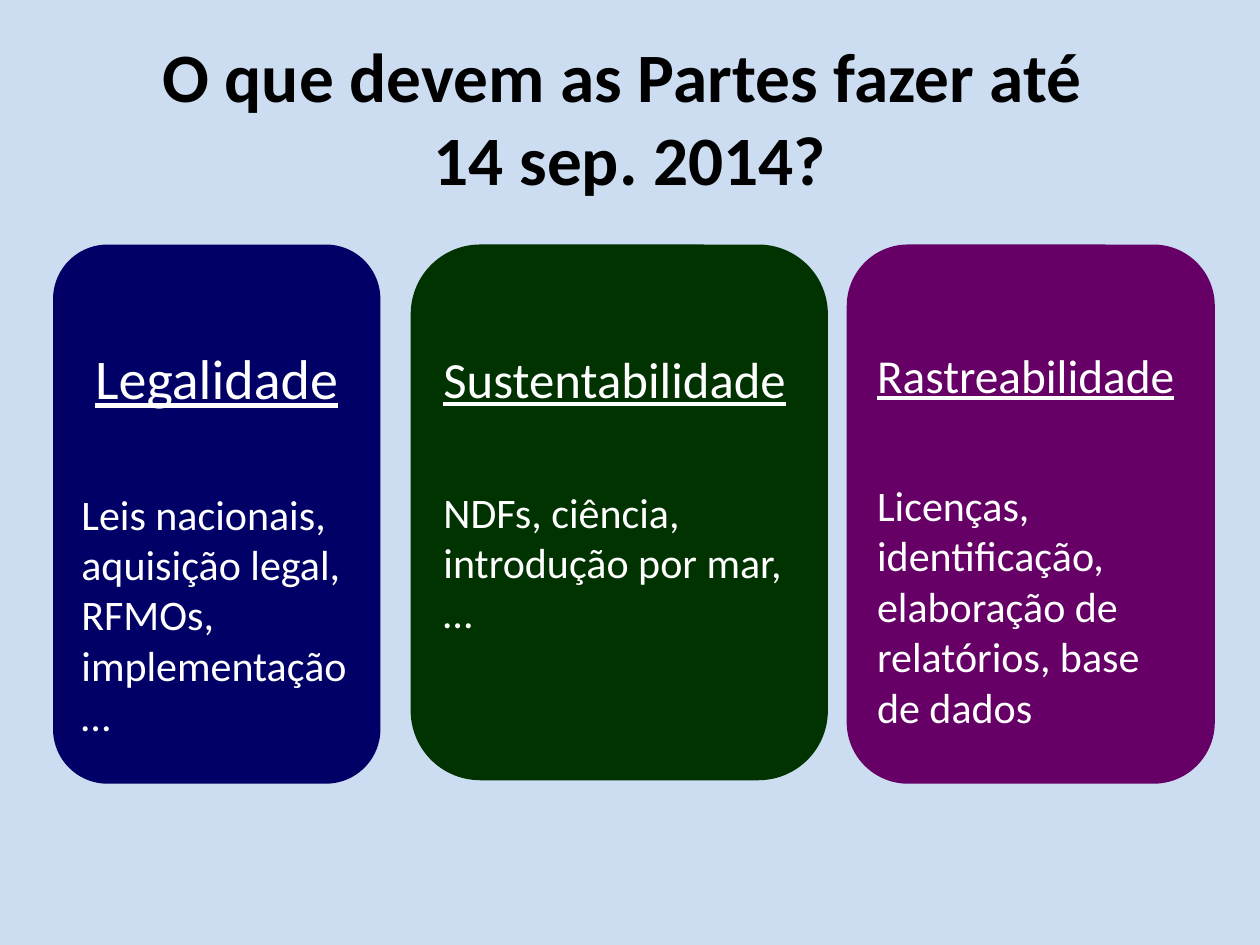
"""Build a slide with a title and three coloured cards."""
from pptx import Presentation
from pptx.dml.color import RGBColor
from pptx.enum.shapes import MSO_SHAPE
from pptx.enum.text import MSO_ANCHOR, PP_ALIGN
from pptx.util import Cm, Pt

ROUNDED = MSO_SHAPE.ROUNDED_RECTANGLE
TOP, MIDDLE = MSO_ANCHOR.TOP, MSO_ANCHOR.MIDDLE
LEFT, CENTER = PP_ALIGN.LEFT, PP_ALIGN.CENTER

FONT = "Calibri"
BACKGROUND, BLACK, WHITE = "CCDDF2", "000000", "FFFFFF"
TITLE = "O que devem as Partes fazer até \v14 sep. 2014?"
CARD_TOP = 4.93
CARDS = [
    {"heading": "Legalidade", "size": 32, "align": CENTER, "color": "000066",
     "body": "Leis nacionais, aquisição legal, RFMOs, implementação …",
     "left": 1.07, "width": 6.6, "height": 10.87},
    {"heading": "Sustentabilidade", "size": 29, "align": LEFT, "color": "003300",
     "body": "NDFs, ciência, introdução por mar, …",
     "left": 8.28, "width": 8.41, "height": 10.8},
    {"heading": "Rastreabilidade", "size": 27, "align": LEFT, "color": "660066",
     "body": "Licenças, identificação, elaboração de relatórios, base de dados",
     "left": 17.07, "width": 7.42, "height": 10.87},
]


def paint(fill, color):
    fill.solid()
    fill.fore_color.rgb = RGBColor.from_string(color)


def write(paragraph, text, size, color, align):
    paragraph.text = text
    paragraph.alignment = align
    paragraph.font.name = FONT
    paragraph.font.size = Pt(size)
    paragraph.font.color.rgb = RGBColor.from_string(color)
    return paragraph


def add_title(page):
    box = page.shapes.add_textbox(Cm(1.27), Cm(0.76), Cm(22.86), Cm(3.18))
    frame = box.text_frame
    frame.word_wrap = True
    frame.vertical_anchor = MIDDLE
    write(frame.paragraphs[0], TITLE, 39.6, BLACK, CENTER).font.bold = True


def add_card(page, card):
    box = page.shapes.add_shape(ROUNDED, Cm(card["left"]), Cm(CARD_TOP),
                                Cm(card["width"]), Cm(card["height"]))
    box.shadow.inherit = False
    paint(box.fill, card["color"])
    box.line.fill.background()
    frame = box.text_frame
    frame.word_wrap = True
    frame.vertical_anchor = TOP
    frame.margin_top = Cm(1.68)
    heading = write(frame.paragraphs[0], card["heading"], card["size"], WHITE, card["align"])
    heading.font.underline = True
    body = write(frame.add_paragraph(), card["body"], 24, WHITE, LEFT)
    body.space_before = Pt(44)


def main():
    deck = Presentation()
    deck.slide_width, deck.slide_height = Cm(25.4), Cm(19.05)
    page = deck.slides.add_slide(deck.slide_layouts[6])
    paint(page.background.fill, BACKGROUND)
    add_title(page)
    for card in CARDS:
        add_card(page, card)
    deck.save("out.pptx")


if __name__ == "__main__":
    main()
